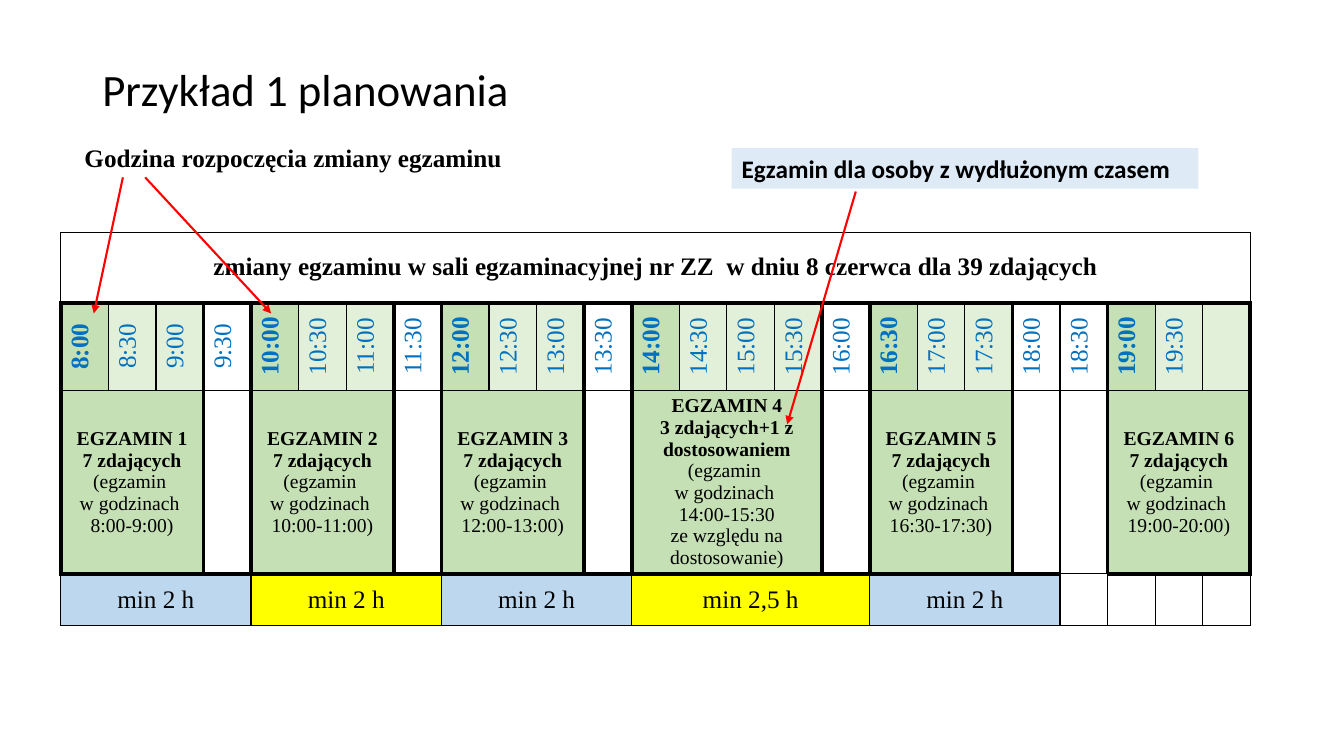
from copy import deepcopy
from dataclasses import dataclass

from lxml import etree
from pptx import Presentation
from pptx import util as u
from pptx.dml import color
from pptx.enum import shapes, text
from pptx.oxml import ns

COLORS = {
    "black": "000000", "white": "FFFFFF", "red": "FF0000", "time": "0070C0",
    "start": "C5E0B4", "slot": "E2F0D9", "callout": "DEEBF7",
    "blue": "BDD7EE", "yellow": "FFFF00",
}
SERIF, SANS = "Times New Roman", "Calibri"
SLOTS = 25
THIN, THICK = 1, 3


@dataclass
class Exam:
    start: int
    span: int = 3
    group: str = "7 zdających"
    reason: str = ""


@dataclass
class Label:
    words: str
    left: float
    top: float
    width: float
    height: float
    font: str = SANS
    size: float = 18
    bold: bool = True
    fill: str = ""


@dataclass
class Arrow:
    x1: float
    y1: float
    x2: float
    y2: float


EXAMS = [
    Exam(0), Exam(4), Exam(8),
    Exam(12, 4, "3 zdających+1 z dostosowaniem", "ze względu na dostosowanie)"),
    Exam(17), Exam(22),
]
EDGES = {edge for e in EXAMS for edge in (e.start, e.start + e.span)}
LABELS = [
    Label("Godzina rozpoczęcia zmiany egzaminu", 53.3, 97.9, 413, 29, SERIF),
    Label("Przykład 1 planowania", 66, 29, 828, 69, size=32, bold=False),
    Label("Egzamin dla osoby z wydłużonym czasem", 522.7, 105.8, 333.4, 29, fill="callout"),
]
ARROWS = [
    Arrow(103.7, 126.7, 193.7, 223.9),
    Arrow(87.8, 126.7, 67, 223.9),
    Arrow(611.3, 136.8, 562.3, 303.1),
]


def rgb(name: str) -> color.RGBColor:
    return color.RGBColor.from_string(COLORS[name])


def clock(slot: int) -> str:
    return f"{8 + slot // 2}:{slot % 2 * 30:02d}"


def format_runs(p, font: str, size: float, bold: bool, ink: str = "black") -> None:
    for r in p.runs:
        r.font.name, r.font.size, r.font.bold = font, u.Pt(size), bold
        r.font.color.rgb = rgb(ink)
    for br in p._p.findall(ns.qn("a:br")):
        br.insert(0, deepcopy(p.runs[0]._r.rPr))


def draw_cell(table, row: int, col: int, span: int, fill: str, borders: tuple,
              lines: tuple = (), size: float = 18, bold_lines: int = 0,
              ink: str = "black", vertical: bool = False) -> None:
    """Borders are widths for left, right, top and bottom."""
    first = table.cell(row, col)
    if span > 1:
        first.merge(table.cell(row, col + span - 1))
    for c in range(col, col + span):
        cell = table.cell(row, c)
        tc_pr = cell._tc.get_or_add_tcPr()
        for side, width in zip("LRTB", borders):
            ln = etree.SubElement(tc_pr, ns.qn(f"a:ln{side}"), w=str(u.Pt(width)))
            solid = etree.SubElement(ln, ns.qn("a:solidFill"))
            etree.SubElement(solid, ns.qn("a:srgbClr"), val=COLORS["black"])
        cell.fill.solid()
        cell.fill.fore_color.rgb = rgb(fill)
    first.vertical_anchor = text.MSO_ANCHOR.MIDDLE
    if vertical:
        first._tc.tcPr.set("vert", "vert270")
    first.text_frame.text = "\n".join(lines)
    for i, p in enumerate(first.text_frame.paragraphs):
        p.alignment = text.PP_ALIGN.CENTER
        format_runs(p, SERIF, size, i < bold_lines, ink)


def draw_schedule(s) -> None:
    heights = (50.4, 62.6, 125.3, 36.7)
    frame = s.shapes.add_table(4, SLOTS, u.Pt(43.4), u.Pt(165.8), u.Pt(850.25), u.Pt(sum(heights)))
    table = frame.table
    table.first_row = table.horz_banding = False
    for column in table.columns:
        column.width = u.Pt(34.01)
    for row, height in zip(table.rows, heights):
        row.height = u.Pt(height)

    def sides(col: int, span: int = 1) -> tuple:
        return tuple(THICK if edge in EDGES else THIN for edge in (col, col + span))

    # Heading
    draw_cell(table, 0, 0, SLOTS, "white", (THIN, THIN, THIN, THICK),
              ("zmiany egzaminu w sali egzaminacyjnej nr ZZ  w dniu 8 czerwca dla 39 zdających",),
              bold_lines=1)

    # Half-hour slots, with the breaks between exams
    starts = {e.start for e in EXAMS}
    busy = {c for e in EXAMS for c in range(e.start, e.start + e.span)}
    for c in range(SLOTS):
        fill = "start" if c in starts else "slot" if c in busy else "white"
        top = THICK if c in busy else THIN
        draw_cell(table, 1, c, 1, fill, (*sides(c), top, THIN),
                  (clock(c),) if c < SLOTS - 1 else (),
                  bold_lines=int(c in starts), ink="time", vertical=True)
        if c not in busy:
            draw_cell(table, 2, c, 1, "white", (*sides(c), THIN, THIN))

    # Exams
    for number, e in enumerate(EXAMS, 1):
        hours = f"{clock(e.start)}-{clock(e.start + e.span - 1)}"
        ending = (hours, e.reason) if e.reason else (hours + ")",)
        draw_cell(table, 2, e.start, e.span, "start",
                  (*sides(e.start, e.span), THIN, THICK),
                  (f"EGZAMIN {number}", e.group, "(egzamin \vw godzinach ", *ending),
                  size=14, bold_lines=2)

    # Minimum time from one exam to the next
    col = 0
    for i, span in enumerate((4, 4, 4, 5, 4)):
        hours = f"{span / 2:g}".replace(".", ",")
        draw_cell(table, 3, col, span, ("blue", "yellow")[i % 2],
                  (THIN, THIN, THICK, THIN), (f"min {hours} h",))
        col += span
    for c in range(col, SLOTS):
        top = THICK if c in busy else THIN
        draw_cell(table, 3, c, 1, "white", (THIN, THIN, top, THIN))


def draw_label(s, label: Label) -> None:
    box = s.shapes.add_textbox(*map(u.Pt, (label.left, label.top, label.width, label.height)))
    if label.fill:
        box.fill.solid()
        box.fill.fore_color.rgb = rgb(label.fill)
    tf = box.text_frame
    tf.word_wrap = True
    tf.vertical_anchor = text.MSO_ANCHOR.MIDDLE
    tf.text = label.words
    format_runs(tf.paragraphs[0], label.font, label.size, label.bold)


def draw_arrow(s, arrow: Arrow) -> None:
    line = s.shapes.add_connector(shapes.MSO_CONNECTOR.STRAIGHT,
                                  *map(u.Pt, (arrow.x1, arrow.y1, arrow.x2, arrow.y2)))
    line.line.color.rgb = rgb("red")
    line.line.width = u.Pt(1.5)
    etree.SubElement(line.line._get_or_add_ln(), ns.qn("a:tailEnd"), type="triangle")
    etree.SubElement(line._element.spPr, ns.qn("a:effectLst"))


def main() -> None:
    prs = Presentation()
    prs.slide_width, prs.slide_height = u.Pt(960), u.Pt(540)
    s = prs.slides.add_slide(prs.slide_layouts[6])
    draw_schedule(s)
    for label in LABELS:
        draw_label(s, label)
    for arrow in ARROWS:
        draw_arrow(s, arrow)
    prs.save("out.pptx")


if __name__ == "__main__":
    main()
